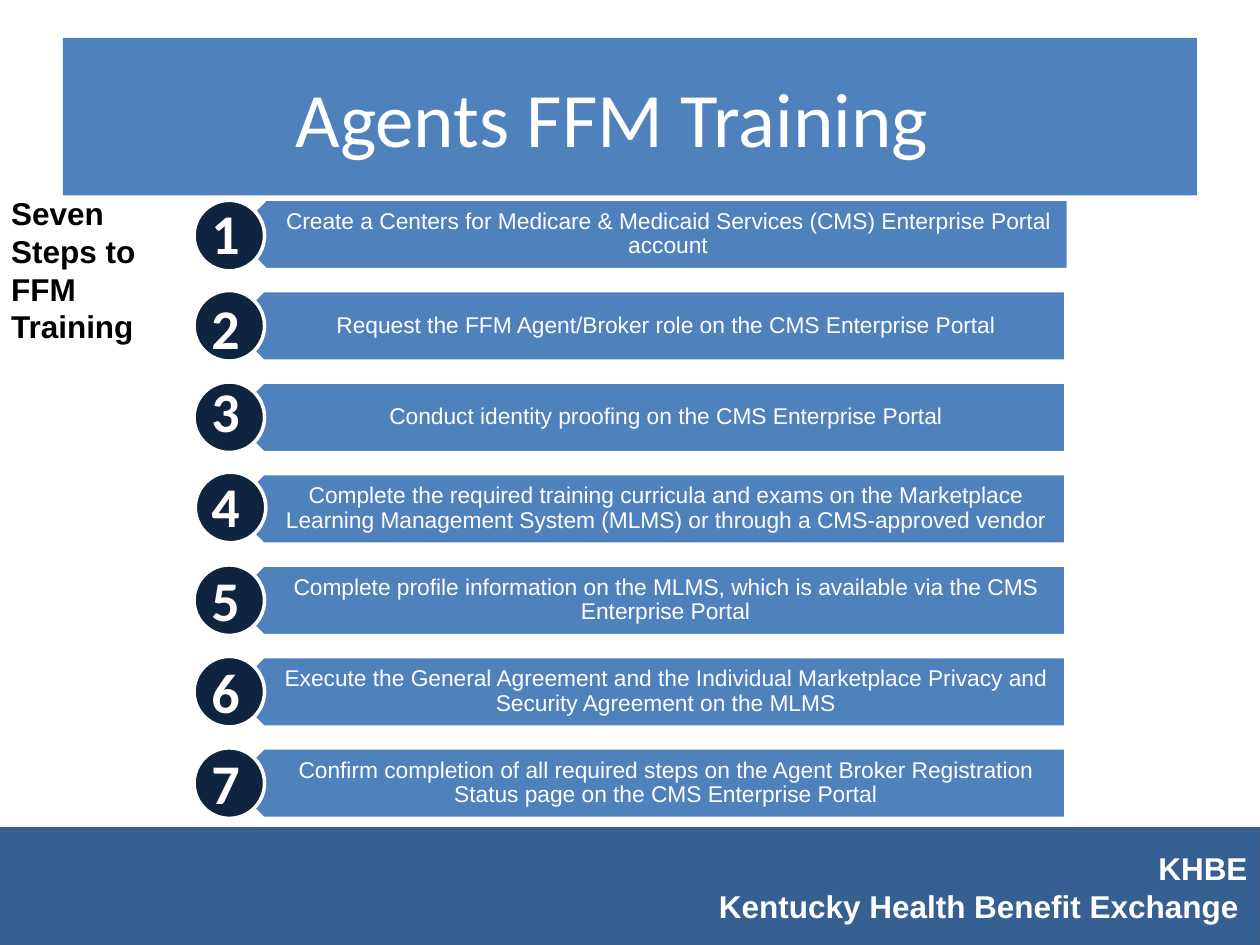
import pptx
import pptx.util
import pptx.dml.color
import pptx.enum.shapes
import pptx.enum.text

Inches = pptx.util.Inches
Pt = pptx.util.Pt
RGBColor = pptx.dml.color.RGBColor
Shape = pptx.enum.shapes.MSO_SHAPE
Align = pptx.enum.text.PP_ALIGN
Anchor = pptx.enum.text.MSO_ANCHOR
Fit = pptx.enum.text.MSO_AUTO_SIZE

BLUE = RGBColor(0x4F, 0x81, 0xBD)
NAVY = RGBColor(0x0F, 0x24, 0x3E)
DEEP = RGBColor(0x37, 0x60, 0x92)
EDGE = RGBColor(0x3A, 0x5F, 0x8C)
WHITE = RGBColor(0xFF, 0xFF, 0xFF)
BLACK = RGBColor(0, 0, 0)

# Step grid, in inches
TOP, PITCH, SIZE = 1.58, 0.726, 0.56
LEFT, WIDE = 1.81, 6.65

# Font formats
TITLE = {"name": "Calibri", "size": Pt(44)}
SIDE = {"name": "Arial", "size": Pt(18), "bold": True}
STEP = {"name": "Arial", "size": Pt(13)}
DIGIT = {"name": "Calibri", "size": Pt(32), "bold": True}

# Step wording, bar shift, circle shift (x, y), top of the number
STEPS = [
    ("Create a Centers for Medicare & Medicaid Services (CMS) "
     "Enterprise Portal account", 0.02, (0, 0.01), 1.53),
    ("Request the FFM Agent/Broker role on the CMS Enterprise Portal",
     0, (0, 0), 2.28),
    ("Conduct identity proofing on the CMS Enterprise Portal",
     0, (0, 0), 2.94),
    ("Complete the required training curricula and exams on the Marketplace "
     "Learning Management System (MLMS) or through a CMS-approved vendor",
     0, (0.01, -0.01), 3.69),
    ("Complete profile information on the MLMS, which is available via the "
     "CMS Enterprise Portal", 0, (0, 0), 4.44),
    ("Execute the General Agreement and the Individual Marketplace Privacy "
     "and Security Agreement on the MLMS", 0, (0, 0), 5.17),
    ("Confirm completion of all required steps on the Agent Broker "
     "Registration Status page on the CMS Enterprise Portal",
     0, (0, 0), 5.89),
]


def style(item, form):
    for key, value in form.items():
        setattr(item, key, value)


def write(shape, lines, font, color, para=None, frame=None):
    text = shape.text_frame
    style(text, {"word_wrap": True, **(frame or {})})
    for i, line in enumerate(lines):
        p = text.paragraphs[0] if i == 0 else text.add_paragraph()
        style(p, para or {})
        run = p.add_run()
        run.text = line
        style(run.font, font)
        run.font.color.rgb = color


def draw(shapes, kind, box, fill, edge=None):
    shape = shapes.add_shape(kind, *map(Inches, box))
    shape.shadow.inherit = False
    shape.fill.solid()
    shape.fill.fore_color.rgb = fill
    if edge is None:
        shape.line.fill.background()
    else:
        shape.line.color.rgb = edge
        shape.line.width = Pt(2)
    return shape


def label(shapes, box, *text):
    write(shapes.add_textbox(*map(Inches, box)), *text)


def step(shapes, row, words, shift, move):
    top, left = TOP + row * PITCH, LEFT + shift
    bar = draw(shapes, Shape.PENTAGON, (left, top, WIDE, SIZE), BLUE, WHITE)
    bar.rotation = 180
    label(shapes, (left + 0.14, top, WIDE - 0.14, SIZE), [words], STEP, WHITE,
          {"alignment": Align.CENTER, "line_spacing": 0.9},
          {"vertical_anchor": Anchor.MIDDLE, "margin_left": Inches(0.25)})
    draw(shapes, Shape.OVAL, (1.54 + move[0], top + move[1], SIZE, SIZE),
         NAVY, WHITE)


def main():
    deck = pptx.Presentation()
    deck.slide_width, deck.slide_height = Inches(10), Inches(7.5)
    shapes = deck.slides.add_slide(deck.slide_layouts[6]).shapes

    # Title band
    band = draw(shapes, Shape.RECTANGLE, (0.5, 0.3, 9, 1.25), BLUE)
    write(band, ["Agents FFM Training"], TITLE, WHITE,
          {"alignment": Align.CENTER},
          {"vertical_anchor": Anchor.MIDDLE, "margin_right": Inches(0.38)})

    # Side heading
    grow = {"auto_size": Fit.SHAPE_TO_FIT_TEXT}
    label(shapes, (-0.01, 1.49, 1.43, 1.31), ["Seven Steps to FFM Training"],
          SIDE, BLACK, None, grow)

    # Seven steps, then their numbers on top
    group = shapes.add_group_shape().shapes
    for row, (words, shift, move, _) in enumerate(STEPS):
        step(group, row, words, shift, move)
    for row, (*_, top) in enumerate(STEPS):
        label(shapes, (1.58, top, 0.25, 0.64), [str(row + 1)],
              DIGIT, WHITE, None, grow)

    # Footer band
    foot = draw(shapes, Shape.RECTANGLE, (0, 6.58, 10, 0.92), DEEP, EDGE)
    write(foot, ["KHBE", "Kentucky Health Benefit Exchange "], SIDE, WHITE,
          {"alignment": Align.RIGHT}, {"vertical_anchor": Anchor.MIDDLE})

    deck.save("out.pptx")


if __name__ == "__main__":
    main()
